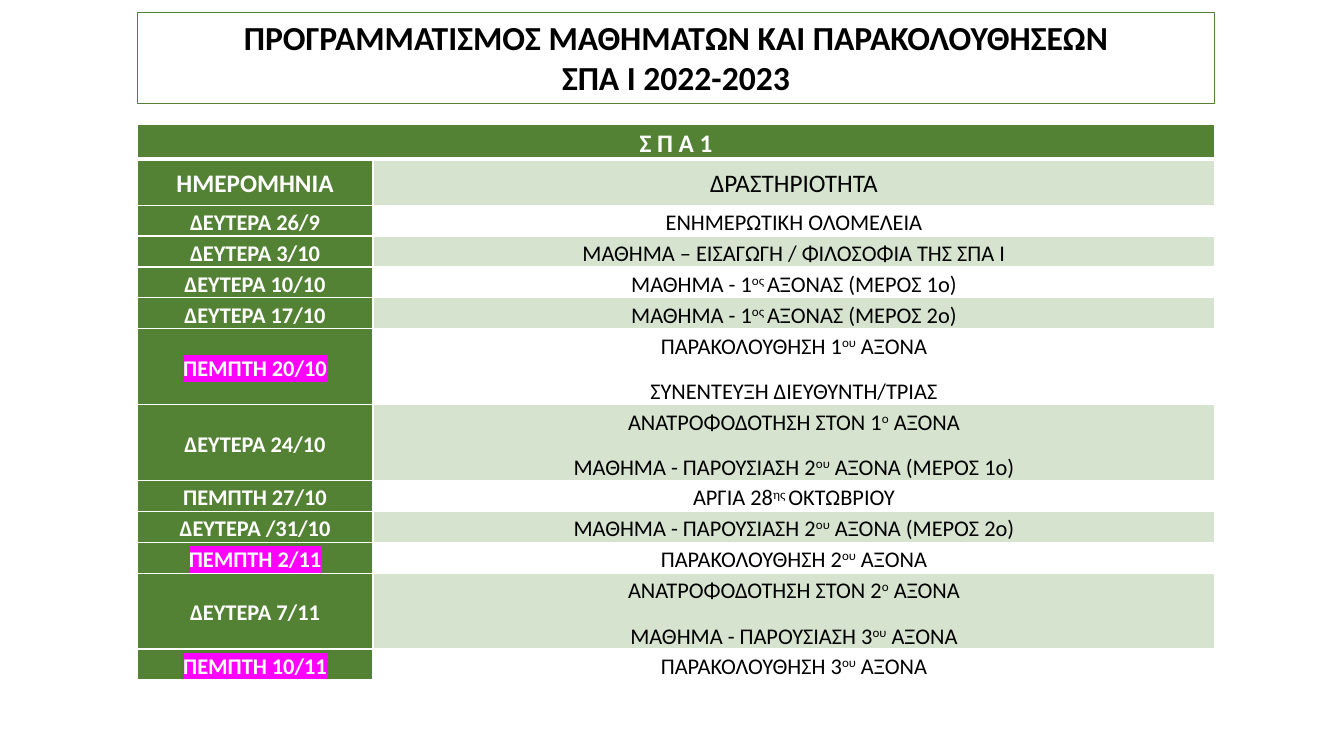
from dataclasses import dataclass

from lxml import etree
from pptx import Presentation
from pptx import util as u
from pptx.dml.color import RGBColor
from pptx.enum import shapes, text
from pptx.oxml import ns


@dataclass(frozen=True)
class Theme:
    font: str = "Calibri"
    green: str = "548235"
    pale_green: str = "D5E3CF"
    white: str = "FFFFFF"
    black: str = "000000"
    highlight: str = "FF00FF"
    title_size: int = 24
    heading_size: int = 18
    body_size: int = 16


THEME = Theme()
TITLE = ["ΠΡΟΓΡΑΜΜΑΤΙΣΜΟΣ ΜΑΘΗΜΑΤΩΝ ΚΑΙ ΠΑΡΑΚΟΛΟΥΘΗΣΕΩΝ", "ΣΠΑ Ι 2022-2023"]
TABLE_HEADING = "Σ Π Α 1"
COLUMN_HEADINGS = ("ΗΜΕΡΟΜΗΝΙΑ", ["ΔΡΑΣΤΗΡΙΟΤΗΤΑ"])
# Text between two ^ marks is superscript.
SCHEDULE = [
    ("ΔΕΥΤΕΡΑ 26/9", ["ΕΝΗΜΕΡΩΤΙΚΗ ΟΛΟΜΕΛΕΙΑ"]),
    ("ΔΕΥΤΕΡΑ 3/10", ["ΜΑΘΗΜΑ – ΕΙΣΑΓΩΓΗ / ΦΙΛΟΣΟΦΙΑ ΤΗΣ ΣΠΑ Ι"]),
    ("ΔΕΥΤΕΡΑ 10/10", ["ΜΑΘΗΜΑ - 1^ος ^ΑΞΟΝΑΣ (ΜΕΡΟΣ 1ο)"]),
    ("ΔΕΥΤΕΡΑ 17/10", ["ΜΑΘΗΜΑ - 1^ος ^ΑΞΟΝΑΣ (ΜΕΡΟΣ 2ο)"]),
    ("ΠΕΜΠΤΗ 20/10", ["ΠΑΡΑΚΟΛΟΥΘΗΣΗ 1^ου^ ΑΞΟΝΑ", "ΣΥΝΕΝΤΕΥΞΗ ΔΙΕΥΘΥΝΤΗ/ΤΡΙΑΣ"]),
    ("ΔΕΥΤΕΡΑ 24/10", ["ΑΝΑΤΡΟΦΟΔΟΤΗΣΗ ΣΤΟΝ 1^ο^ ΑΞΟΝΑ",
                       "ΜΑΘΗΜΑ - ΠΑΡΟΥΣΙΑΣΗ 2^ου^ ΑΞΟΝΑ (ΜΕΡΟΣ 1ο)"]),
    ("ΠΕΜΠΤΗ 27/10", ["ΑΡΓΙΑ 28^ης ^ΟΚΤΩΒΡΙΟΥ"]),
    ("ΔΕΥΤΕΡΑ /31/10", ["ΜΑΘΗΜΑ - ΠΑΡΟΥΣΙΑΣΗ 2^ου^ ΑΞΟΝΑ (ΜΕΡΟΣ 2ο)"]),
    ("ΠΕΜΠΤΗ 2/11", ["ΠΑΡΑΚΟΛΟΥΘΗΣΗ 2^ου^ ΑΞΟΝΑ"]),
    ("ΔΕΥΤΕΡΑ 7/11", ["ΑΝΑΤΡΟΦΟΔΟΤΗΣΗ ΣΤΟΝ 2^ο^ ΑΞΟΝΑ",
                      "ΜΑΘΗΜΑ - ΠΑΡΟΥΣΙΑΣΗ 3^ου^ ΑΞΟΝΑ"]),
    ("ΠΕΜΠΤΗ 10/11", ["ΠΑΡΑΚΟΛΟΥΘΗΣΗ 3^ου^ ΑΞΟΝΑ"]),
]
OBSERVATION_DAYS = {"ΠΕΜΠΤΗ 20/10", "ΠΕΜΠΤΗ 2/11", "ΠΕΜΠΤΗ 10/11"}


def set_attributes(target, values):
    for name, value in values.items():
        setattr(target, name, value)


def add_color(parent, tag, color):
    element = etree.SubElement(parent, ns.qn(tag))
    etree.SubElement(element, ns.qn("a:srgbClr"), val=color)
    return element


def write_lines(frame, lines, size, color, bold, highlight=None, **spacing):
    """Write centred paragraphs, with ^...^ marking superscript."""
    for index, line in enumerate(lines):
        paragraph = frame.add_paragraph() if index else frame.paragraphs[0]
        set_attributes(paragraph, {"alignment": text.PP_ALIGN.CENTER, **spacing})
        for part, words in enumerate(line.split("^")):
            if not words:
                continue
            run = paragraph.add_run()
            run.text = words
            set_attributes(run.font, {"name": THEME.font, "size": u.Pt(size), "bold": bold})
            run.font.color.rgb = RGBColor.from_string(color)
            properties = run._r.get_or_add_rPr()
            if part % 2:
                properties.set("baseline", "30000")
            if highlight:
                mark = add_color(properties, "a:highlight", highlight)
                properties.find(ns.qn("a:solidFill")).addnext(mark)


def set_borders(cell, top=1, bottom=1):
    properties = cell._tc.get_or_add_tcPr()
    widths = {"a:lnL": 1, "a:lnR": 1, "a:lnT": top, "a:lnB": bottom}
    for index, (tag, width) in enumerate(widths.items()):
        line = etree.Element(ns.qn(tag), w=str(u.Pt(width)))
        add_color(line, "a:solidFill", THEME.white)
        properties.insert(index, line)


def fill_cell(cell, lines, fill, size, color, bold, highlight=None):
    set_attributes(cell, {
        "vertical_anchor": text.MSO_ANCHOR.MIDDLE,
        "margin_left": u.Inches(0.05), "margin_right": u.Inches(0.05),
        "margin_top": 0, "margin_bottom": 0,
    })
    cell.fill.solid()
    cell.fill.fore_color.rgb = RGBColor.from_string(fill)
    write_lines(cell.text_frame, lines, size, color, bold, highlight,
                line_spacing=1.15, space_after=u.Pt(10))


def add_title(slide, left, top, width, height):
    box = slide.shapes.add_shape(shapes.MSO_SHAPE.RECTANGLE, left, top, width, height)
    box.shadow.inherit = False
    box.fill.background()
    box.line.color.rgb = RGBColor.from_string(THEME.green)
    box.line.width = u.Pt(0.75)
    set_attributes(box.text_frame, {
        "word_wrap": True, "vertical_anchor": text.MSO_ANCHOR.TOP,
        "auto_size": text.MSO_AUTO_SIZE.SHAPE_TO_FIT_TEXT,
    })
    write_lines(box.text_frame, TITLE, THEME.title_size, THEME.black, True)


def add_schedule(slide, left, top, width, height):
    entries = [COLUMN_HEADINGS, *SCHEDULE]
    table = slide.shapes.add_table(len(entries) + 1, 2, left, top, width, height).table
    date_width = u.Inches(2.34)
    table.columns[0].width = date_width
    table.columns[1].width = width - date_width

    table.rows[0].height = u.Inches(0.31)
    table.cell(0, 0).merge(table.cell(0, 1))
    fill_cell(table.cell(0, 0), [TABLE_HEADING], THEME.green,
              THEME.heading_size, THEME.white, True)
    for cell in table.rows[0].cells:
        set_borders(cell, bottom=3)

    for row, (date, activities) in enumerate(entries, start=1):
        is_heading = row == 1
        row_height = 0.46 if is_heading else 0.69 if len(activities) > 1 else 0.27
        table.rows[row].height = u.Inches(row_height)
        size = THEME.heading_size if is_heading else THEME.body_size
        band = THEME.pale_green if row % 2 else THEME.white
        mark = THEME.highlight if date in OBSERVATION_DAYS else None
        fill_cell(table.cell(row, 0), [date], THEME.green, size, THEME.white, True, mark)
        fill_cell(table.cell(row, 1), activities, band, size, THEME.black, False)
        for cell in table.rows[row].cells:
            set_borders(cell, top=3 if is_heading else 1)


def main():
    presentation = Presentation()
    presentation.slide_width = u.Inches(13.33)
    presentation.slide_height = u.Inches(7.5)
    slide = presentation.slides.add_slide(presentation.slide_layouts[6])
    left, width = u.Inches(1.36), u.Inches(10.69)
    add_title(slide, left, u.Inches(0.12), width, u.Inches(0.91))
    add_schedule(slide, left, u.Inches(1.23), width, u.Inches(5.3))
    presentation.save("out.pptx")


if __name__ == "__main__":
    main()
